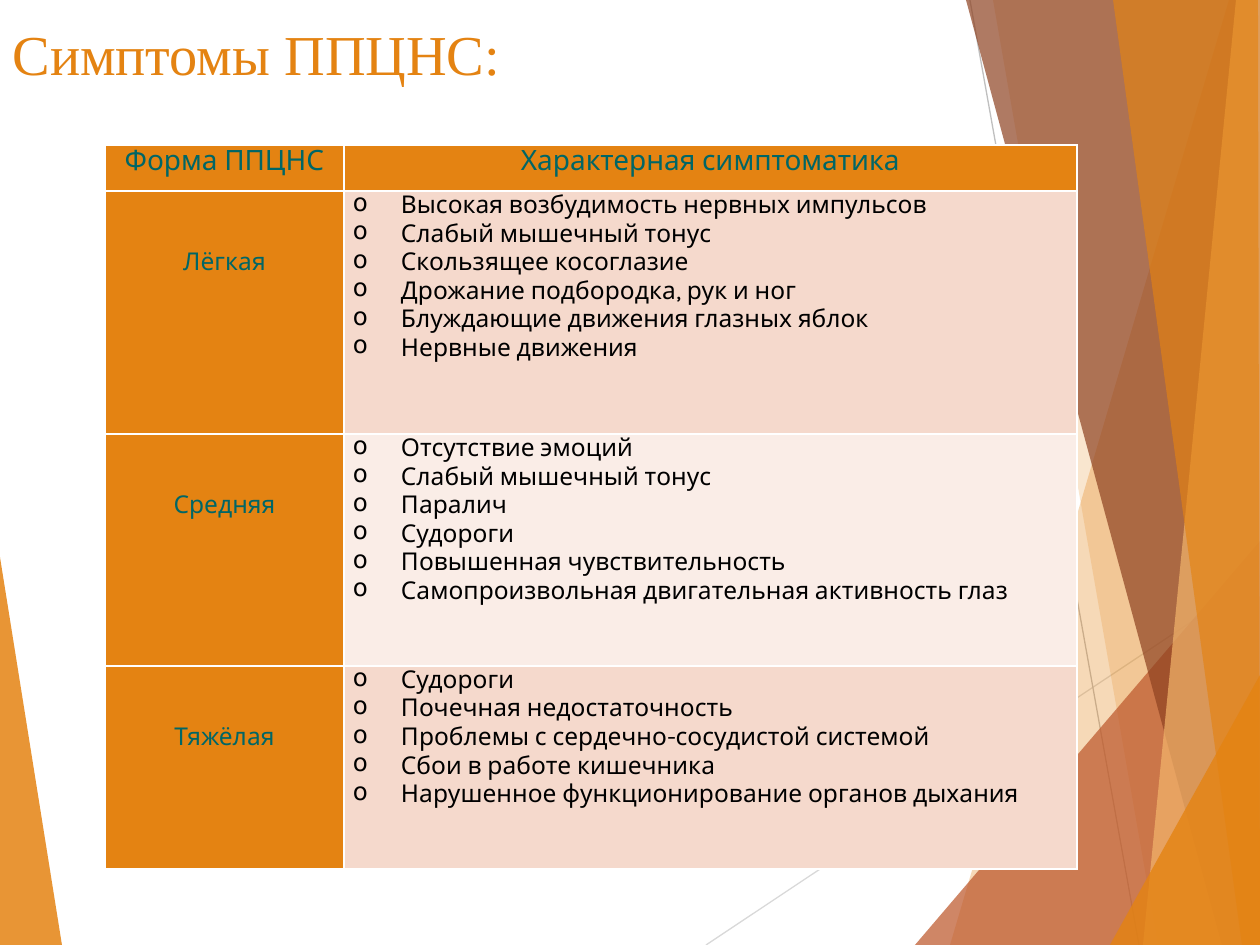
from dataclasses import dataclass
from lxml.etree import SubElement
from pptx import Presentation
from pptx.dml.color import RGBColor
from pptx.enum.shapes import MSO_CONNECTOR
from pptx.enum.text import MSO_ANCHOR, MSO_AUTO_SIZE, PP_ALIGN
from pptx.oxml.ns import qn
from pptx.util import Pt

SCALE = 914400 / 126


@dataclass(frozen=True)
class Theme:
    """Hold the colours, fonts and type sizes of the slide."""
    main: str = "E48312"
    rust: str = "BD582C"
    brown: str = "8E4221"
    sand: str = "F3B56C"
    pale: str = "F5D9CC"
    light: str = "FAEDE7"
    teal: str = "006666"
    black: str = "000000"
    white: str = "FFFFFF"
    serif: str = "Times New Roman"
    sans: str = "Karla"
    big: float = 32.2
    head: int = 16
    body: int = 14


LOOK = Theme()

FACETS = [
    (LOOK.main, 85, [(0, 557), (62, 945), (0, 945)]),
    (LOOK.main, 30, [(1229, 0), (950, 945), (1260, 945), (1260, 0)]),
    (LOOK.main, 20, [(993, 0), (1158, 945), (1260, 945), (1260, 0)]),
    (LOOK.rust, 72, [(915, 945), (1260, 541), (1260, 945)]),
    (LOOK.brown, 70, [(966, 0), (1222, 945), (1260, 945), (1260, 0)]),
    (LOOK.sand, 70, [(1236, 0), (1143, 945), (1260, 945), (1260, 0)]),
    (LOOK.main, 65, [(1113, 0), (1242, 945), (1260, 945), (1258, 0)]),
    (LOOK.main, 80, [(1110, 945), (1260, 675), (1260, 945)]),
]
RAYS = [("D9D9D9", (706, 945, 1260, 576)), ("BFBFBF", (970, 0, 1139, 945))]
COLS = [239, 733]
ROWS = [46, 243, 232, 203]
HEADS = ["Форма ППЦНС", "Характерная симптоматика"]
FORMS = [
    ("Лёгкая", [
        "Высокая возбудимость нервных импульсов",
        "Слабый мышечный тонус",
        "Скользящее косоглазие",
        "Дрожание подбородка, рук и ног",
        "Блуждающие движения глазных яблок",
        "Нервные движения",
    ]),
    ("Средняя", [
        "Отсутствие эмоций",
        "Слабый мышечный тонус",
        "Паралич",
        "Судороги",
        "Повышенная чувствительность",
        "Самопроизвольная двигательная активность глаз",
    ]),
    ("Тяжёлая", [
        "Судороги",
        "Почечная недостаточность",
        "Проблемы с сердечно-сосудистой системой",
        "Сбои в работе кишечника",
        "Нарушенное функционирование органов дыхания",
    ]),
]


def px(size):
    """Turn pixels into EMU."""
    return round(size * SCALE)


def tint(code):
    """Turn a hex code into a colour."""
    return RGBColor.from_string(code)


def style(para, name, size, code, align):
    """Format one paragraph."""
    para.alignment = align
    para.font.name = name
    para.font.size = Pt(size)
    para.font.color.rgb = tint(code)


def facet(slide, code, alpha, points):
    """Draw one translucent polygon."""
    pen = slide.shapes.build_freeform(*points[0], scale=SCALE)
    pen.add_line_segments(points[1:], close=True)
    shape = pen.convert_to_shape()
    shape.shadow.inherit = False
    shape.line.fill.background()
    shape.fill.solid()
    shape.fill.fore_color.rgb = tint(code)
    mark = next(shape.element.spPr.iter(qn("a:srgbClr")))
    SubElement(mark, qn("a:alpha"), val=str(alpha * 1000))


def ray(slide, code, ends):
    """Draw one thin line."""
    line = slide.shapes.add_connector(MSO_CONNECTOR.STRAIGHT, *map(px, ends))
    line.line.color.rgb = tint(code)
    line.line.width = Pt(0.75)
    SubElement(line.element.spPr, qn("a:effectLst"))


def title(slide, text):
    """Place the slide title."""
    shape = slide.shapes.title
    shape.left, shape.top, shape.width, shape.height = map(px, (0, 5, 1004, 158))
    frame = shape.text_frame
    frame.text = text
    frame.word_wrap = True
    frame.auto_size = MSO_AUTO_SIZE.NONE
    frame.vertical_anchor = MSO_ANCHOR.TOP
    frame.margin_top = px(14)
    style(frame.paragraphs[0], LOOK.serif, LOOK.big, LOOK.main, PP_ALIGN.LEFT)


def edge(cell, side, width):
    """Give a cell one white border."""
    line = SubElement(cell._tc.get_or_add_tcPr(), qn("a:ln" + side), w=str(Pt(width)))
    fill = SubElement(line, qn("a:solidFill"))
    SubElement(fill, qn("a:srgbClr"), val=LOOK.white)


def bullet(para):
    """Give a paragraph a hanging round bullet."""
    props = para._p.get_or_add_pPr()
    props.set("marL", str(px(48)))
    props.set("indent", str(px(-48)))
    SubElement(props, qn("a:buChar"), char="o")


def fill(cell, lines, size, code, back, top=0, listed=False):
    """Write and format one table cell."""
    cell.margin_left = cell.margin_right = px(9)
    cell.margin_top, cell.margin_bottom = px(top), 0
    for side in "LRTB":
        edge(cell, side, 1)
    cell.fill.solid()
    cell.fill.fore_color.rgb = tint(back)
    cell.text_frame.text = "\n".join(lines)
    align = PP_ALIGN.JUSTIFY if listed else PP_ALIGN.CENTER
    for para in cell.text_frame.paragraphs:
        if listed:
            bullet(para)
        style(para, LOOK.sans, size, code, align)


def grid(slide):
    """Build the table of forms and symptoms."""
    box = map(px, (105, 145, sum(COLS), sum(ROWS)))
    table = slide.shapes.add_table(len(ROWS), len(COLS), *box).table
    table.first_row = table.horz_banding = False
    for col, width in zip(table.columns, COLS):
        col.width = px(width)
    for row, height in zip(table.rows, ROWS):
        row.height = px(height)
    for col, text in enumerate(HEADS):
        fill(table.cell(0, col), [text], LOOK.head, LOOK.teal, LOOK.main)
    for row, (form, signs) in enumerate(FORMS, 1):
        back = LOOK.pale if row % 2 else LOOK.light
        fill(table.cell(row, 0), [form], LOOK.body, LOOK.teal, LOOK.main, top=57)
        fill(table.cell(row, 1), signs, LOOK.body, LOOK.black, back, listed=True)


def main():
    """Build and save the slide."""
    deck = Presentation()
    deck.slide_width, deck.slide_height = px(1260), px(945)
    slide = deck.slides.add_slide(deck.slide_layouts[5])
    facet(slide, *FACETS[0])
    for item in RAYS:
        ray(slide, *item)
    for item in FACETS[1:]:
        facet(slide, *item)
    grid(slide)
    title(slide, "Симптомы ППЦНС:")
    deck.save("out.pptx")


if __name__ == "__main__":
    main()
